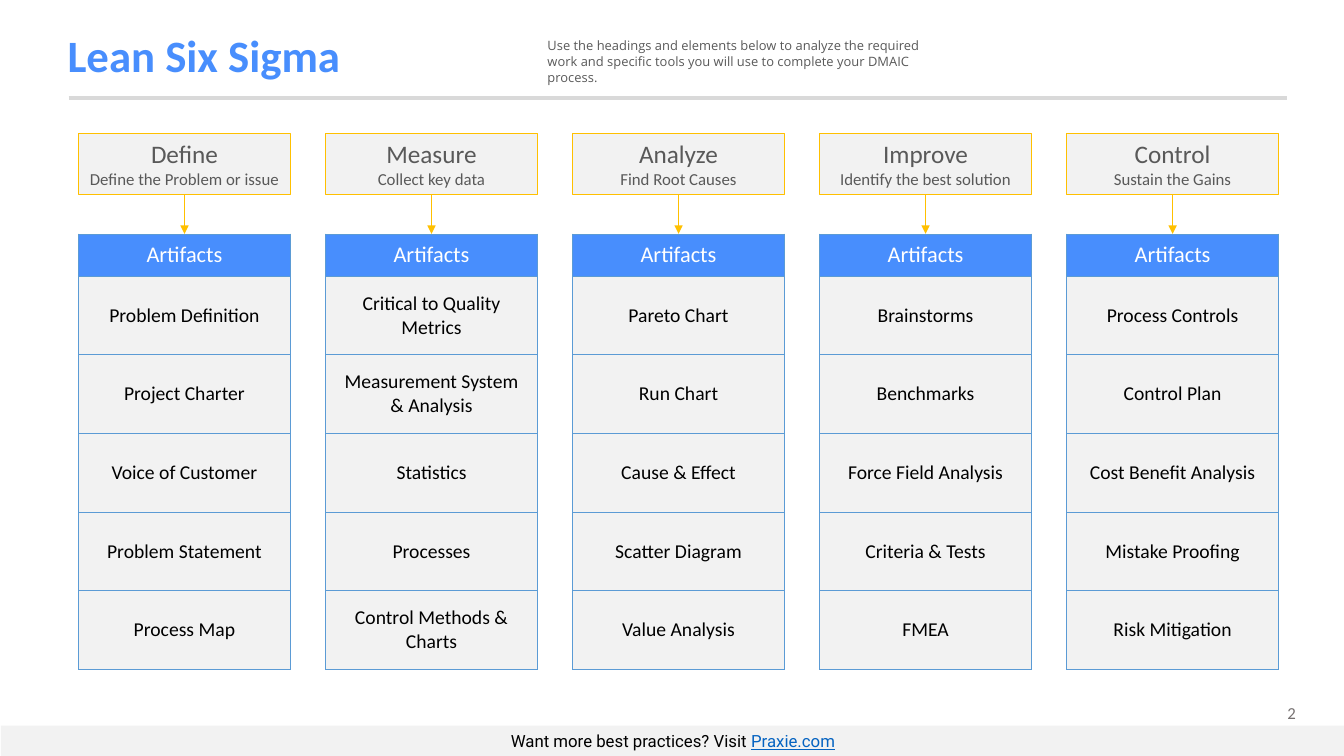
from lxml import etree
from pptx import Presentation
from pptx import util as u
from pptx.dml.color import RGBColor
from pptx.enum import shapes, text
from pptx.oxml import ns

BLUE = RGBColor(0x48, 0x8E, 0xFD)
BORDER = RGBColor(0x5B, 0x9B, 0xD5)
LINK = RGBColor(0x05, 0x63, 0xC1)
AMBER = RGBColor(0xFF, 0xC0, 0x00)
PALE = RGBColor(0xF2, 0xF2, 0xF2)
RULE = RGBColor(0xD9, 0xD9, 0xD9)
SLATE = RGBColor(0x59, 0x59, 0x59)
GRAY = RGBColor(0x76, 0x71, 0x71)
BLACK = RGBColor(0, 0, 0)
WHITE = RGBColor(0xFF, 0xFF, 0xFF)

# Column grid in inches
LEFT, PITCH, WIDTH = 0.78, 2.45, 2.1
CARD_TOP, CARD_HEIGHT = 1.32, 0.61
TABLE_TOP, HEAD_ROW, BODY_ROW = 2.32, 0.42, 0.78

PHASES = [
    ("Define", "Define the Problem or issue",
     ["Problem Definition", "Project Charter", "Voice of Customer",
      "Problem Statement", "Process Map"]),
    ("Measure", "Collect key data",
     ["Critical to Quality Metrics", "Measurement System & Analysis",
      "Statistics", "Processes", "Control Methods & Charts"]),
    ("Analyze", "Find Root Causes",
     ["Pareto Chart", "Run Chart", "Cause & Effect", "Scatter Diagram",
      "Value Analysis"]),
    ("Improve", "Identify the best solution",
     ["Brainstorms", "Benchmarks", "Force Field Analysis",
      "Criteria & Tests", "FMEA"]),
    ("Control", "Sustain the Gains",
     ["Process Controls", "Control Plan", "Cost Benefit Analysis",
      "Mistake Proofing", "Risk Mitigation"]),
]


def write(para, words, size=12, font="Calibri", color=BLACK, bold=False,
          underline=False, align=text.PP_ALIGN.CENTER, spacing=None):
    """Add one formatted span of text to a paragraph."""
    para.alignment = align
    if spacing:
        para.line_spacing = spacing
    span = para.add_run()
    span.text = words
    span.font.size = u.Pt(size)
    span.font.name = font
    span.font.bold = bold
    span.font.underline = underline
    span.font.color.rgb = color


class Board:
    """The current slide and the style of its elements."""

    def __init__(self, page):
        self.page = page

    def place(self, holder, left, top, width, height, anchor):
        holder.left, holder.top = u.Inches(left), u.Inches(top)
        holder.width, holder.height = u.Inches(width), u.Inches(height)
        frame = holder.text_frame
        frame.auto_size = text.MSO_AUTO_SIZE.NONE
        frame.vertical_anchor = anchor
        return frame.paragraphs[0]

    def box(self, left, top, width, height, line=None, wrap=True):
        box = self.page.shapes.add_shape(
            shapes.MSO_SHAPE.RECTANGLE, u.Inches(left), u.Inches(top),
            u.Inches(width), u.Inches(height))
        box.shadow.inherit = False
        box.fill.solid()
        box.fill.fore_color.rgb = PALE
        if line is None:
            box.line.fill.background()
        else:
            box.line.color.rgb = line
            box.line.width = u.Pt(0.75)
        box.text_frame.word_wrap = wrap
        box.text_frame.vertical_anchor = text.MSO_ANCHOR.MIDDLE
        return box.text_frame

    def label(self, left, top, width, height, words, **style):
        box = self.page.shapes.add_textbox(
            u.Inches(left), u.Inches(top), u.Inches(width), u.Inches(height))
        box.text_frame.word_wrap = True
        write(box.text_frame.paragraphs[0], words, **style)

    def line(self, x1, y1, x2, y2, color, weight, arrow=False):
        line = self.page.shapes.add_connector(
            shapes.MSO_CONNECTOR.STRAIGHT,
            *(u.Inches(length) for length in (x1, y1, x2, y2)))
        line.line.color.rgb = color
        line.line.width = u.Pt(weight)
        if arrow:
            stroke = line.line._get_or_add_ln()
            etree.SubElement(stroke, ns.qn("a:tailEnd"), type="triangle")
        etree.SubElement(line._element.spPr, ns.qn("a:effectLst"))

    def cell(self, cell, words, fill, **style):
        cell.vertical_anchor = text.MSO_ANCHOR.MIDDLE
        properties = cell._tc.get_or_add_tcPr()
        for side in ("lnL", "lnR", "lnT", "lnB"):
            edge = etree.SubElement(properties, ns.qn(f"a:{side}"),
                                    w=str(u.Pt(0.5)))
            paint = etree.SubElement(edge, ns.qn("a:solidFill"))
            etree.SubElement(paint, ns.qn("a:srgbClr"), val=str(BORDER))
        cell.fill.solid()
        cell.fill.fore_color.rgb = fill
        write(cell.text_frame.paragraphs[0], words, **style)

    def artifacts(self, left, items):
        height = HEAD_ROW + BODY_ROW * len(items)
        table = self.page.shapes.add_table(
            len(items) + 1, 1, u.Inches(left), u.Inches(TABLE_TOP),
            u.Inches(WIDTH), u.Inches(height)).table
        table.first_row = table.horz_banding = False
        for row in table.rows:
            row.height = u.Inches(BODY_ROW)
        table.rows[0].height = u.Inches(HEAD_ROW)
        self.cell(table.cell(0, 0), "Artifacts", BLUE, size=16, color=WHITE)
        for number, item in enumerate(items, 1):
            self.cell(table.cell(number, 0), item, PALE, size=14)

    def phase(self, column, name, goal, items):
        left = LEFT + PITCH * column
        middle = left + WIDTH / 2
        frame = self.box(left, CARD_TOP, WIDTH, CARD_HEIGHT, AMBER, False)
        write(frame.paragraphs[0], name, size=18, color=SLATE)
        write(frame.add_paragraph(), goal, color=SLATE)
        self.artifacts(left, items)
        self.line(middle, CARD_TOP + CARD_HEIGHT, middle, TABLE_TOP,
                  AMBER, 0.5, arrow=True)


def main():
    deck = Presentation()
    deck.slide_width, deck.slide_height = u.Inches(13.33), u.Inches(7.5)
    page = deck.slides.add_slide(deck.slide_layouts[1])
    board = Board(page)

    # Title and introduction
    para = board.place(page.shapes.title, 0.57, 0.19, 4.15, 0.77,
                       text.MSO_ANCHOR.MIDDLE)
    write(para, "Lean Six Sigma", size=32, color=BLUE, bold=True,
          align=text.PP_ALIGN.LEFT, spacing=0.9)
    para = board.place(page.placeholders[1], 5.33, 0.31, 4.15, 0.49,
                       text.MSO_ANCHOR.TOP)
    properties = para._p.get_or_add_pPr()
    properties.set("marL", "0")
    properties.set("indent", "0")
    etree.SubElement(properties, ns.qn("a:buNone"))
    para.space_before = u.Pt(0)
    write(para, "Use the headings and elements below to analyze the required "
          "work and specific tools you will use to complete your DMAIC "
          "process.", size=9.2, font="Open Sans", color=SLATE,
          align=text.PP_ALIGN.LEFT, spacing=1.06)
    board.line(0.68, 0.97, 12.76, 0.97, RULE, 3)

    # Phases with their artifacts
    for column, (name, goal, items) in enumerate(PHASES):
        board.phase(column, name, goal, items)

    # Page number and footer
    board.label(11.93, 6.92, 1.02, 0.3, "2", color=GRAY,
                align=text.PP_ALIGN.RIGHT)
    para = board.box(0.01, 7.2, 13.33, 0.3).paragraphs[0]
    write(para, "Want more best practices? Visit ", font="Roboto")
    write(para, "Praxie.com", font="Roboto", color=LINK, underline=True)

    deck.save("out.pptx")


if __name__ == "__main__":
    main()
